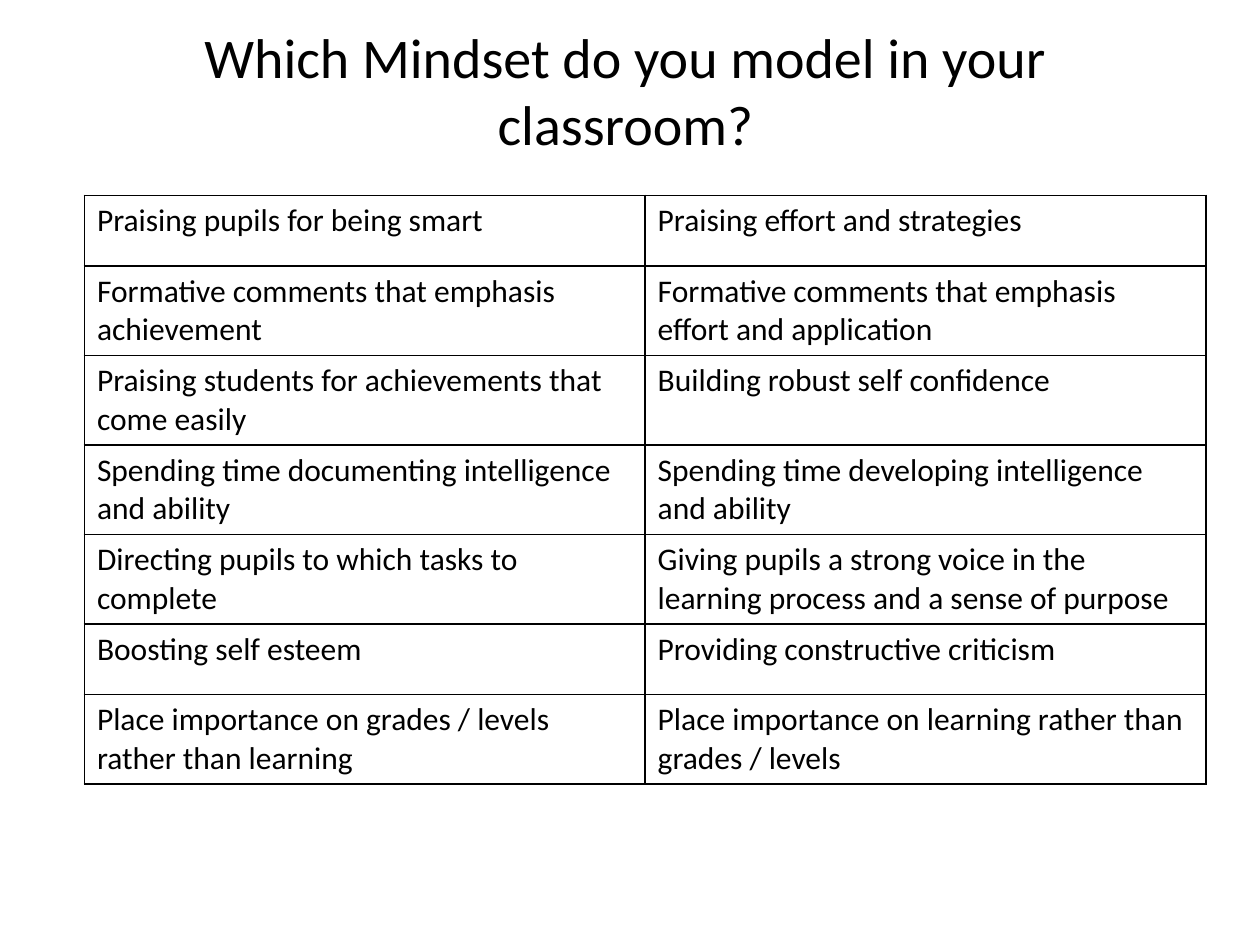
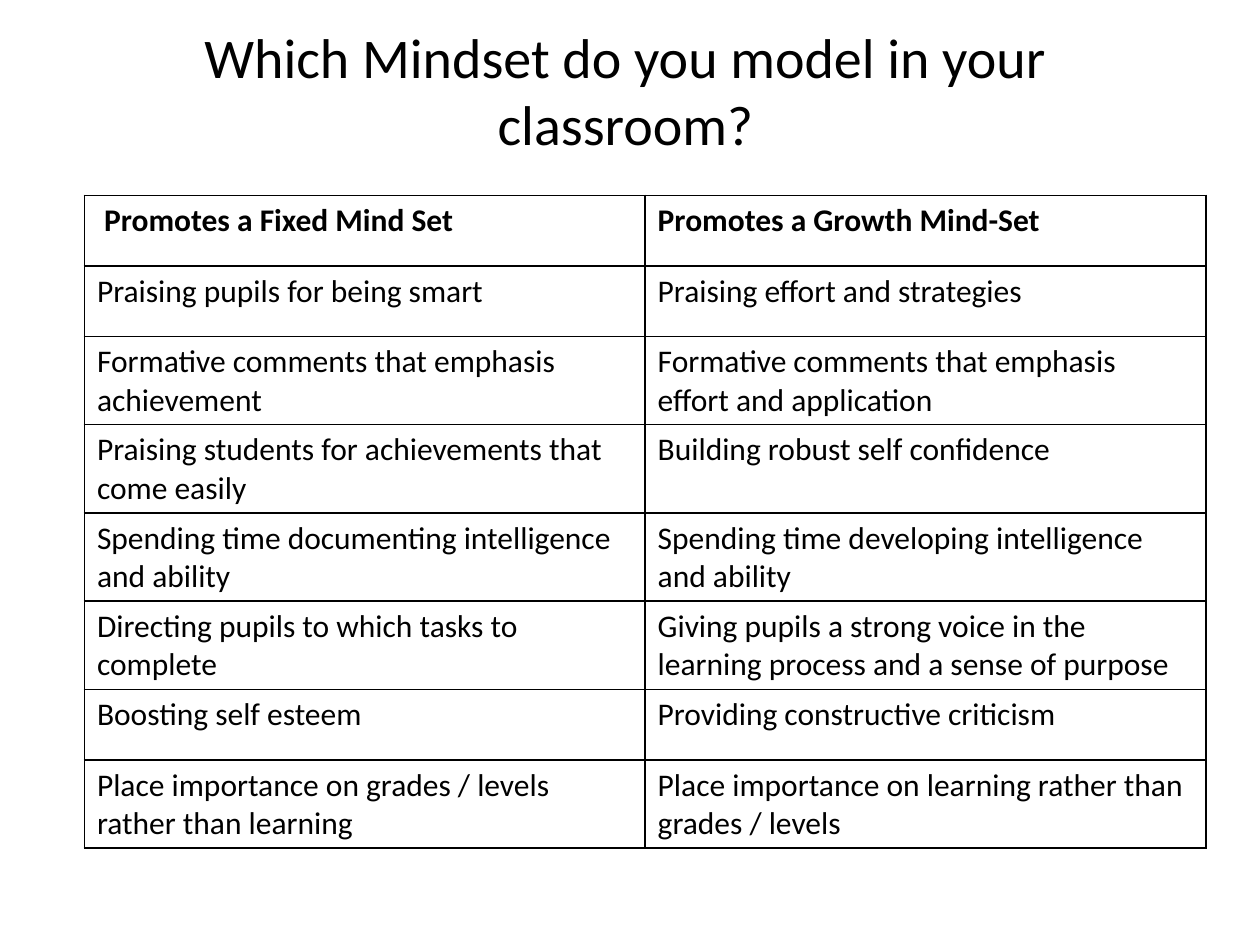
from lxml.etree import SubElement
from pptx import Presentation
from pptx.dml.color import RGBColor
from pptx.enum.text import MSO_AUTO_SIZE, PP_ALIGN
from pptx.oxml.ns import qn
from pptx.util import Inches, Pt

BLACK = RGBColor(0x00, 0x00, 0x00)
FONT = "Calibri"
WIDTH, HEIGHT = Inches(10), Inches(7.5)
COLUMN_WIDTH, ROW_HEIGHT = Inches(4.45), Inches(0.56)
TITLE = "Which Mindset do you model in your classroom?"
HEADINGS = (" Promotes a Fixed Mind Set", "Promotes a Growth Mind-Set")
PRACTICES = [
    ("Praising pupils for being smart", "Praising effort and strategies"),
    ("Formative comments that emphasis achievement",
     "Formative comments that emphasis effort and application"),
    ("Praising students for achievements that come easily",
     "Building robust self confidence"),
    ("Spending time documenting intelligence and ability",
     "Spending time developing intelligence and ability"),
    ("Directing pupils to which tasks to complete",
     "Giving pupils a strong voice in the learning process and a sense of purpose"),
    ("Boosting self esteem", "Providing constructive criticism"),
    ("Place importance on grades / levels rather than learning",
     "Place importance on learning rather than grades / levels"),
]


def add_run(p, text, size, bold=False):
    """Add one styled run to a paragraph."""
    r = p.add_run()
    r.text = text
    r.font.name = FONT
    r.font.size = Pt(size)
    r.font.bold = bold
    r.font.color.rgb = BLACK


def add_title(s, text):
    """Add the centred slide title."""
    sp = s.shapes.add_textbox(Inches(0.83), Inches(0.13), Inches(8.27), Inches(1.18))
    tf = sp.text_frame
    tf.word_wrap = True
    tf.auto_size = MSO_AUTO_SIZE.SHAPE_TO_FIT_TEXT
    p = tf.paragraphs[0]
    p.alignment = PP_ALIGN.CENTER
    add_run(p, text, 32)


def add_borders(cell):
    """Draw a thin black line on all four sides of a cell."""
    tc_pr = cell._tc.get_or_add_tcPr()
    for side in ("a:lnL", "a:lnR", "a:lnT", "a:lnB"):
        line = SubElement(tc_pr, qn(side), w=str(Pt(1)))
        fill = SubElement(line, qn("a:solidFill"))
        SubElement(fill, qn("a:srgbClr"), val=str(BLACK))


def add_comparison(s, rows, has_headings):
    """Add the two-column table of classroom practices."""
    frame = s.shapes.add_table(len(rows), 2, Inches(0.67), Inches(1.55),
                               2 * COLUMN_WIDTH, len(rows) * ROW_HEIGHT)
    table = frame.table
    table.first_row = has_headings
    table.horz_banding = False
    for column in table.columns:
        column.width = COLUMN_WIDTH
    for i, texts in enumerate(rows):
        table.rows[i].height = ROW_HEIGHT
        for j, text in enumerate(texts):
            cell = table.cell(i, j)
            add_borders(cell)
            cell.fill.background()
            add_run(cell.text_frame.paragraphs[0], text, 18, has_headings and i == 0)


def add_mindset_slide(prs, rows, has_headings=False):
    """Add a slide with the shared title and a comparison table."""
    s = prs.slides.add_slide(prs.slide_layouts[6])
    add_comparison(s, rows, has_headings)
    add_title(s, TITLE)


def main():
    """Build and save both slides."""
    prs = Presentation()
    prs.slide_width, prs.slide_height = WIDTH, HEIGHT
    add_mindset_slide(prs, PRACTICES)
    add_mindset_slide(prs, [HEADINGS] + PRACTICES, has_headings=True)
    prs.save("out.pptx")


if __name__ == "__main__":
    main()
